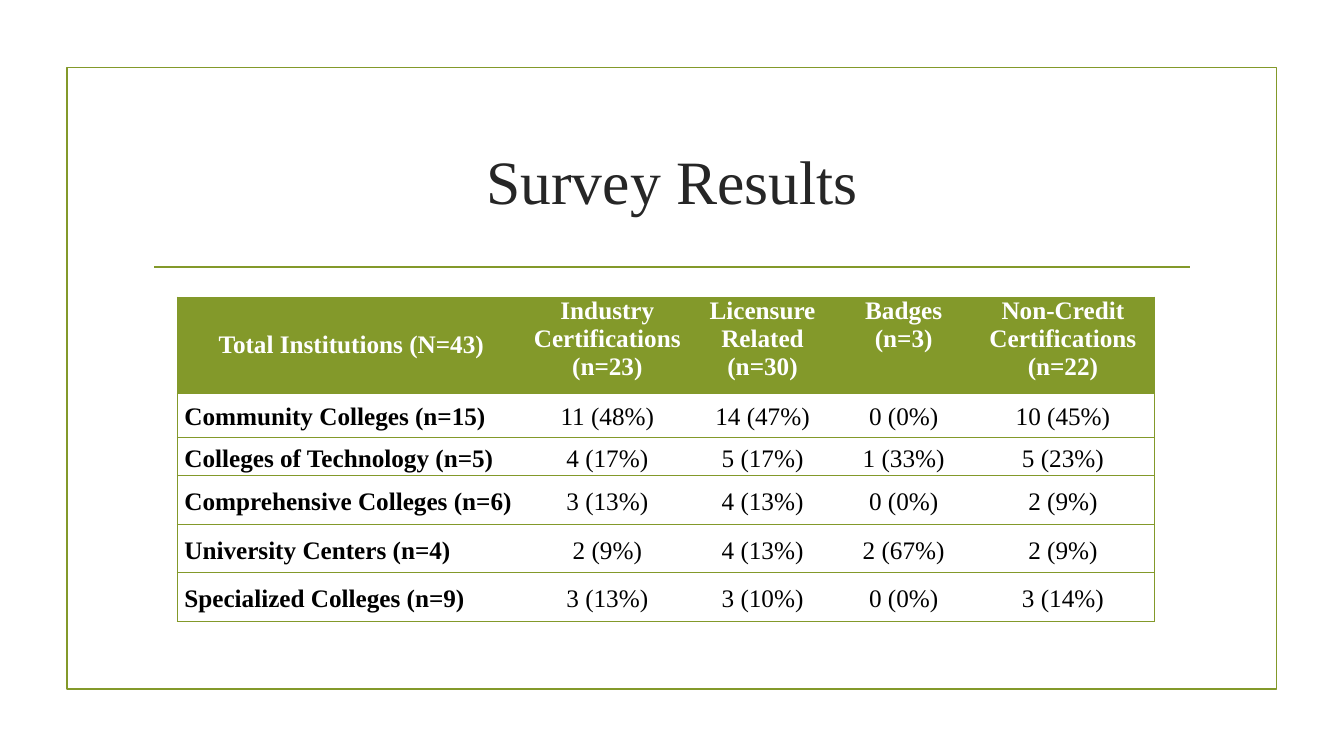
from dataclasses import dataclass

from lxml.etree import SubElement
from pptx import Presentation
from pptx.dml.color import RGBColor
from pptx.enum.shapes import MSO_CONNECTOR, MSO_SHAPE
from pptx.enum.text import MSO_ANCHOR, PP_ALIGN
from pptx.oxml.ns import qn
from pptx.slide import Slide
from pptx.table import _Cell
from pptx.util import Pt

FONT = "Times New Roman"
GREEN = RGBColor(0x83, 0x99, 0x2A)
DARK = RGBColor(0x26, 0x26, 0x26)
BLACK = RGBColor(0, 0, 0)
WHITE = RGBColor(0xFF, 0xFF, 0xFF)

COLUMN_WIDTHS = [248.4, 117.4, 104.4, 97.2, 130.3]
HEADER = [
    "Total Institutions (N=43)",
    "Industry Certifications\n(n=23)",
    "Licensure Related\n(n=30)",
    "Badges\n(n=3)",
    "Non-Credit Certifications\n(n=22)",
]
HEADER_HEIGHT = 68.5


@dataclass
class Institution:
    name: str
    results: list[str]
    height: float


INSTITUTIONS = [
    Institution("Community Colleges (n=15)",
                ["11 (48%)", "14 (47%)", "0 (0%)", "10 (45%)"], 32),
    Institution("Colleges of Technology (n=5)",
                ["4 (17%)", "5 (17%)", "1 (33%)", "5 (23%)"], 27.3),
    Institution("Comprehensive Colleges (n=6)",
                ["3 (13%)", "4 (13%)", "0 (0%)", "2 (9%)"], 34.8),
    Institution("University Centers (n=4)",
                ["2 (9%)", "4 (13%)", "2 (67%)", "2 (9%)"], 34.5),
    Institution("Specialized Colleges (n=9)",
                ["3 (13%)", "3 (10%)", "0 (0%)", "3 (14%)"], 34.5),
]


def add_frame(s: Slide) -> None:
    sp = s.shapes.add_shape(MSO_SHAPE.RECTANGLE, Pt(47.8), Pt(48.2), Pt(864), Pt(444.2))
    sp.shadow.inherit = False
    sp.fill.background()
    sp.line.color.rgb = GREEN
    sp.line.width = Pt(1.25)


def add_title(s: Slide, text: str) -> None:
    sp = s.shapes.title
    sp.left, sp.top, sp.width, sp.height = Pt(102.2), Pt(77), Pt(756), Pt(103)
    tf = sp.text_frame
    tf.vertical_anchor = MSO_ANCHOR.MIDDLE
    p = tf.paragraphs[0]
    p.text = text
    p.alignment = PP_ALIGN.CENTER
    p.font.name, p.font.size = FONT, Pt(44)
    p.font.color.rgb = DARK


def add_title_rule(s: Slide) -> None:
    line = s.shapes.add_connector(
        MSO_CONNECTOR.STRAIGHT, Pt(110.2), Pt(190.8), Pt(850.3), Pt(190.8))
    line.line.color.rgb = GREEN
    line.line.width = Pt(1.25)
    SubElement(line._element.spPr, qn("a:effectLst"))


def set_borders(cell: _Cell, first: bool, last: bool) -> None:
    """Rule the cell above and below, and at the outer sides of the table."""
    tc_pr = cell._tc.get_or_add_tcPr()
    for side, ruled in (("L", first), ("R", last), ("T", True), ("B", True)):
        ln = SubElement(tc_pr, qn(f"a:ln{side}"), w=str(Pt(0.75)))
        if ruled:
            fill = SubElement(ln, qn("a:solidFill"))
            SubElement(fill, qn("a:srgbClr"), val=str(GREEN))
        else:
            SubElement(ln, qn("a:noFill"))


def fill_cell(cell: _Cell, text: str, is_header: bool, first: bool, last: bool) -> None:
    set_borders(cell, first, last)
    cell.margin_left = cell.margin_right = Pt(5)
    cell.margin_top = cell.margin_bottom = Pt(0)
    p = cell.text_frame.paragraphs[0]
    p.text = text
    p.alignment = PP_ALIGN.LEFT if first and not is_header else PP_ALIGN.CENTER
    p.font.name, p.font.size = FONT, Pt(18)
    p.font.bold = is_header or first
    p.font.color.rgb = WHITE if is_header else BLACK
    if is_header:
        cell.fill.solid()
        cell.fill.fore_color.rgb = GREEN
        p.space_after = Pt(10)
    else:
        cell.fill.background()
        p.line_spacing = 1.15
    cell.vertical_anchor = MSO_ANCHOR.TOP if is_header and not first else MSO_ANCHOR.MIDDLE


def add_results_table(s: Slide) -> None:
    rows = [HEADER] + [[i.name, *i.results] for i in INSTITUTIONS]
    heights = [HEADER_HEIGHT] + [i.height for i in INSTITUTIONS]
    table = s.shapes.add_table(
        len(rows), len(HEADER), Pt(126.7), Pt(212.2),
        Pt(sum(COLUMN_WIDTHS)), Pt(sum(heights))).table
    table.first_row = table.horz_banding = False
    for column, width in zip(table.columns, COLUMN_WIDTHS):
        column.width = Pt(width)
    for r, (row, height) in enumerate(zip(rows, heights)):
        table.rows[r].height = Pt(height)
        for c, text in enumerate(row):
            fill_cell(table.cell(r, c), text, r == 0, c == 0, c == len(row) - 1)


def main() -> None:
    prs = Presentation()
    prs.slide_width, prs.slide_height = Pt(960), Pt(540)
    s = prs.slides.add_slide(prs.slide_layouts[5])
    add_frame(s)
    add_title(s, "Survey Results")
    add_title_rule(s)
    add_results_table(s)
    prs.save("out.pptx")


if __name__ == "__main__":
    main()
